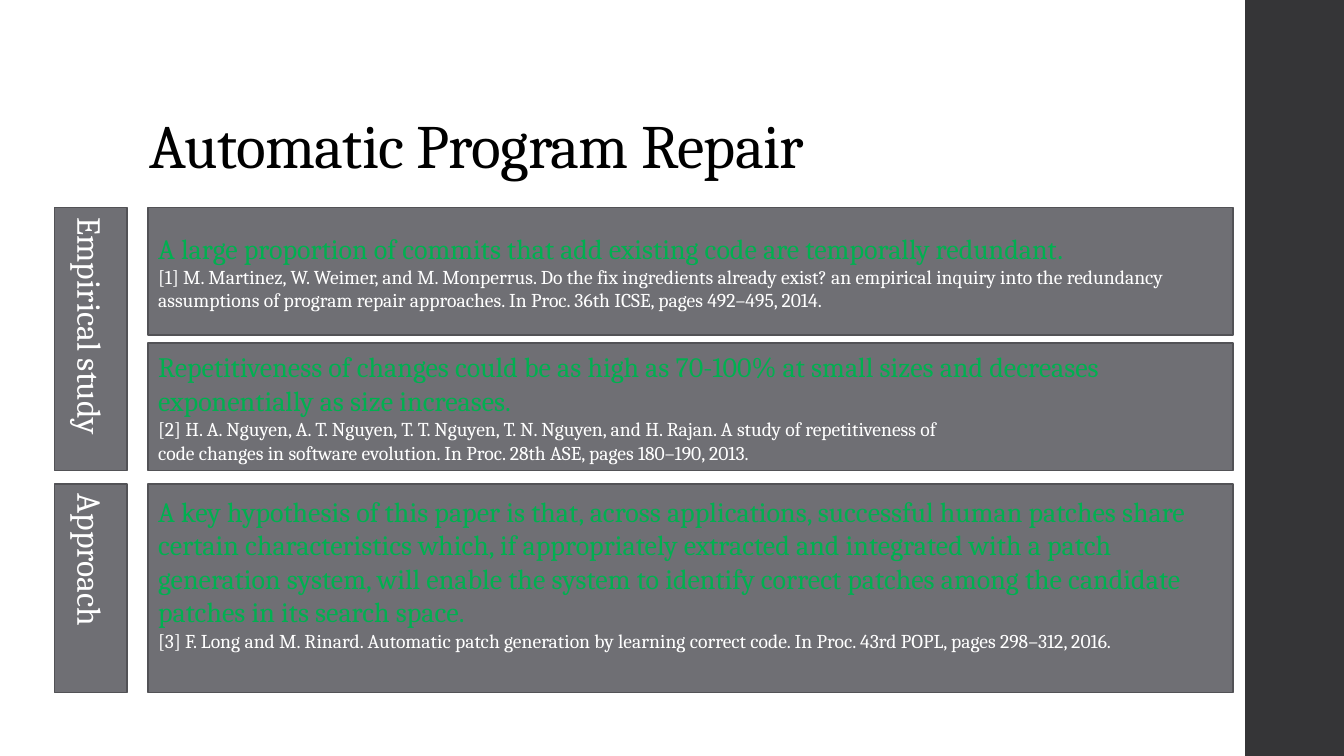
from dataclasses import dataclass

from pptx import Presentation
from pptx.dml.color import RGBColor
from pptx.enum.shapes import MSO_SHAPE
from pptx.enum.text import MSO_ANCHOR, MSO_AUTO_SIZE, PP_ALIGN
from pptx.util import Inches, Pt

RECT = MSO_SHAPE.RECTANGLE
LEFT, CENTER = PP_ALIGN.LEFT, PP_ALIGN.CENTER
MIDDLE, BOTTOM = MSO_ANCHOR.MIDDLE, MSO_ANCHOR.BOTTOM

TITLE = "Automatic Program Repair"
# Each group: label, then its cards as (finding, reference lines)
GROUPS = [
    ("Empirical study", [
        ("A large proportion of commits that add existing code are temporally redundant.",
         ["[1] M. Martinez, W. Weimer, and M. Monperrus. Do the fix ingredients already "
          "exist? an empirical inquiry into the redundancy assumptions of program repair "
          "approaches. In Proc. 36th ICSE, pages 492–495, 2014."]),
        ("Repetitiveness of changes could be as high as 70-100% at small sizes and "
         "decreases exponentially as size increases.",
         ["[2] H. A. Nguyen, A. T. Nguyen, T. T. Nguyen, T. N. Nguyen, and H. Rajan. "
          "A study of repetitiveness of",
          "code changes in software evolution. In Proc. 28th ASE, pages 180–190, 2013."]),
    ]),
    ("Approach", [
        ("A key hypothesis of this paper is that, across applications, successful human "
         "patches share certain characteristics which, if appropriately extracted and "
         "integrated with a patch generation system, will enable the system to identify "
         "correct patches among the candidate patches in its search space.",
         ["[3] F. Long and M. Rinard. Automatic patch generation by learning correct code. "
          "In Proc. 43rd POPL, pages 298–312, 2016."]),
    ]),
]


@dataclass(frozen=True)
class Theme:
    font: str = "Cambria"
    black: str = "000000"
    white: str = "FFFFFF"
    green: str = "00B050"
    fill: str = "6F6F74"
    edge: str = "525256"
    bar: str = "353537"
    title: int = 44
    label: int = 24
    finding: int = 20
    ref: int = 14


T = Theme()
WIDE, HIGH = 13.33, 7.5
BAR_X = 12.35
LABEL_X, LABEL_W = 0.54, 0.72
CARD_X, CARD_W = 1.47, 10.76
TOP, CARD_GAP, GROUP_GAP = 2.06, 0.08, 0.13
GROUP_H = [2.61, 2.07]
PAD = 0.05
LAST_PAD = 0.35  # lifts the last card's text above its centre


def write(frame, lines, align=LEFT, anchor=MIDDLE, pad=PAD, space=None, track=None):
    """Fill a frame with lines given as (text, size, colour)."""
    frame.word_wrap = True
    frame.auto_size = MSO_AUTO_SIZE.NONE
    frame.vertical_anchor = anchor
    frame.margin_bottom = Inches(pad)
    for i, (text, size, color) in enumerate(lines):
        para = frame.add_paragraph() if i else frame.paragraphs[0]
        para.alignment = align
        para.line_spacing = space
        run = para.add_run()
        run.text = text
        run.font.name = T.font
        run.font.size = Pt(size)
        run.font.color.rgb = RGBColor.from_string(color)
        if track is not None:
            run.font._element.set("spc", str(track))


def box(slide, x, y, w, h, fill, edge=None):
    shape = slide.shapes.add_shape(RECT, *map(Inches, (x, y, w, h)))
    shape.shadow.inherit = False
    shape.fill.solid()
    shape.fill.fore_color.rgb = RGBColor.from_string(fill)
    if edge:
        shape.line.color.rgb = RGBColor.from_string(edge)
        shape.line.width = Pt(1.1)
    else:
        shape.line.fill.background()
    return shape


def main():
    deck = Presentation()
    deck.slide_width, deck.slide_height = Inches(WIDE), Inches(HIGH)
    slide = deck.slides.add_slide(deck.slide_layouts[5])
    box(slide, BAR_X, 0, WIDE - BAR_X, HIGH, T.bar)

    title = slide.shapes.title
    title.left, title.top, title.width, title.height = map(Inches, (1.38, 0.4, 10.6, 1.45))
    write(title.text_frame, [(TITLE, T.title, T.black)], anchor=BOTTOM, space=0.9, track=-50)

    y = TOP
    for (name, cards), high in zip(GROUPS, GROUP_H):
        label = box(slide, LABEL_X, y, LABEL_W, high, T.fill, T.edge)
        write(label.text_frame, [(name, T.label, T.white)], align=CENTER)
        label.text_frame._txBody.bodyPr.set("vert", "eaVert")

        card_h = (high - CARD_GAP * (len(cards) - 1)) / len(cards)
        for i, (finding, refs) in enumerate(cards):
            card = box(slide, CARD_X, y + i * (card_h + CARD_GAP), CARD_W, card_h, T.fill, T.edge)
            lines = [(finding, T.finding, T.green)] + [(ref, T.ref, T.white) for ref in refs]
            write(card.text_frame, lines, pad=LAST_PAD if cards is GROUPS[-1][1] else PAD)
        y += high + GROUP_GAP

    deck.save("out.pptx")


if __name__ == "__main__":
    main()
